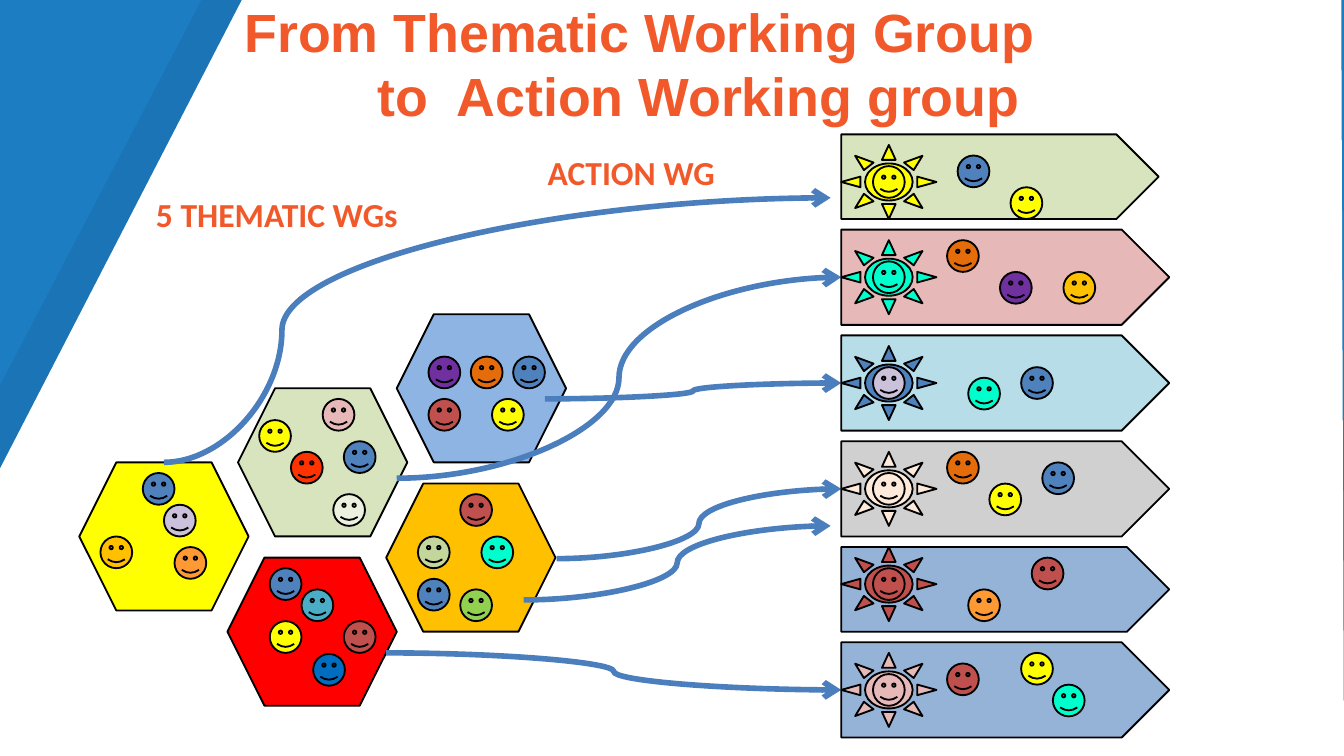
from dataclasses import dataclass

from lxml import etree
from pptx import Presentation
from pptx import util as u
from pptx.dml.color import RGBColor
from pptx.enum import shapes, text
from pptx.oxml.ns import qn

CELL = u.Mm(2)
GRID_LEFT, GRID_TOP = u.Inches(0.59), u.Inches(1)
SLIDE_WIDTH = u.Inches(10)
SLIDE_HEIGHT = SLIDE_WIDTH * 9 // 16
BANNER_COLUMN = 72

BLACK, WHITE, BACKDROP = "000000", "FFFFFF", "1C7DC3"
HEADING, ARROW = "F1592A", "4B7EBC"
BLUE, YELLOW, ORANGE, AMBER = "4F81BD", "FFFF00", "E46C0A", "FFC000"
PURPLE, BRICK, MINT, ROSE = "7030A0", "C0504D", "00FFCC", "E6B9B8"
APRICOT, LILAC, CREAM, SAGE = "FF9933", "CCC1DA", "FDEADA", "D7E4BD"
STEEL = "95B3D7"


@dataclass
class Face:
    """A member, placed in cells from its group's top left corner."""
    column: float
    row: float
    colour: str


@dataclass
class ThematicGroup:
    column: float
    row: float
    colour: str
    faces: list[Face]


@dataclass
class ActionGroup:
    row: float
    columns: float
    rows: float
    colour: str
    sun_colour: str
    leader_colour: str
    faces: list[Face]
    sun_offset: float = 1


@dataclass
class Flow:
    start: tuple[float, float]
    end: tuple[float, float]
    bend: float = 0.5


THEMATIC_GROUPS = [
    ThematicGroup(0, 31, YELLOW, [
        Face(2, 7, AMBER), Face(6, 1, BLUE), Face(8, 4, LILAC), Face(9, 8, APRICOT)]),
    ThematicGroup(15, 24, SAGE, [
        Face(8, 1, ROSE), Face(10, 5, BLUE), Face(9, 10, "EBF1DE"),
        Face(5, 6, "FF3300"), Face(2, 3, YELLOW)]),
    ThematicGroup(14, 40, "FF0000", [
        Face(4, 6, YELLOW), Face(7, 3, "4BACC6"), Face(8.1, 9.1, "006DC0"),
        Face(4, 1, BLUE), Face(11, 6, BRICK)]),
    ThematicGroup(29, 33, AMBER, [
        Face(9, 5, MINT), Face(7, 1, BRICK), Face(7, 10, "92D050"),
        Face(3, 5, "C3D69B"), Face(3, 9, BLUE)]),
    ThematicGroup(30, 17, "8EB4E3", [
        Face(7, 4, ORANGE), Face(9, 8, YELLOW), Face(3, 4, PURPLE),
        Face(11, 4, BLUE), Face(3, 8, BRICK)]),
]

ACTION_GROUPS = [
    ActionGroup(0, 30, 8, SAGE, YELLOW, YELLOW, [Face(11, 2, BLUE), Face(16, 5, YELLOW)]),
    ActionGroup(9, 31, 9, ROSE, MINT, MINT, [
        Face(10, 1, ORANGE), Face(15, 4, PURPLE), Face(21, 4, AMBER)]),
    ActionGroup(19, 31, 9, "B7DEE8", BLUE, LILAC, [Face(17, 3, BLUE), Face(12, 4, MINT)]),
    ActionGroup(29, 31, 9, "D0D0D0", CREAM, CREAM, [
        Face(19, 2, BLUE), Face(14, 4, YELLOW), Face(10, 1, ORANGE)]),
    ActionGroup(39, 31, 8, STEEL, BRICK, BRICK, [
        Face(18, 1, BRICK), Face(12, 4, APRICOT)], sun_offset=0),
    ActionGroup(48, 31, 9, STEEL, ROSE, ROSE, [
        Face(10, 2, BRICK), Face(17, 1, YELLOW), Face(20, 4, MINT)]),
]

FLOWS = [
    Flow((44, 25), (72, 23.5)),
    Flow((30, 32.5), (72, 13.5)),
    Flow((29, 49), (72, 52.5)),
    Flow((45.1, 40.1), (72, 33.5)),
    Flow((8, 31), (71, 6), bend=0.177),
    Flow((42, 44), (71, 37)),
]


def rgb(colour: str) -> RGBColor:
    return RGBColor.from_string(colour)


def at(column: float, row: float) -> tuple[int, int]:
    return GRID_LEFT + round(column * CELL), GRID_TOP + round(row * CELL)


def size(columns: float, rows: float) -> tuple[int, int]:
    return round(columns * CELL), round(rows * CELL)


def draw_shape(page, kind, column: float, row: float, columns: float, rows: float,
               colour: str) -> None:
    shape = page.shapes.add_shape(kind, *at(column, row), *size(columns, rows))
    shape.shadow.inherit = False
    shape.fill.solid()
    shape.fill.fore_color.rgb = rgb(colour)
    shape.line.color.rgb = rgb(BLACK)
    shape.line.width = u.Pt(1)


def draw_face(page, column: float, row: float, colour: str) -> None:
    draw_shape(page, shapes.MSO_SHAPE.SMILEY_FACE, column, row, 3, 3, colour)


def draw_faces(page, faces: list[Face], column: float, row: float) -> None:
    for face in faces:
        draw_face(page, column + face.column, row + face.row, face.colour)


def draw_leader(page, group: ActionGroup) -> None:
    row = group.row + group.sun_offset
    draw_shape(page, shapes.MSO_SHAPE.SUN, BANNER_COLUMN, row, 9, 7, group.sun_colour)
    draw_face(page, BANNER_COLUMN + 3, row + 2, group.leader_colour)


def draw_flow(page, flow: Flow) -> None:
    arrow = page.shapes.add_connector(
        shapes.MSO_CONNECTOR.CURVE, *at(*flow.start), *at(*flow.end))
    arrow.line.color.rgb = rgb(ARROW)
    arrow.line.width = u.Pt(3)
    properties = arrow._element.spPr
    etree.SubElement(properties.find(qn("a:ln")), qn("a:tailEnd"), type="arrow")
    etree.SubElement(properties, qn("a:effectLst"))
    guides = properties.find(qn("a:prstGeom")).get_or_add_avLst()
    etree.SubElement(guides, qn("a:gd"), name="adj1", fmla=f"val {round(flow.bend * 100000)}")


def draw_panel(page, top_left: float, left_edge: float, colour: str, opacity: float = 1) -> None:
    """Cover the page right of a diagonal; its ends are shares of width and height."""
    corners = [(0.998, 0), (1, 1), (0, 1), (0, left_edge), (top_left, 0)]
    points = [(round(x * SLIDE_WIDTH), round(y * SLIDE_HEIGHT)) for x, y in corners]
    builder = page.shapes.build_freeform(*points[0])
    builder.add_line_segments(points[1:])
    panel = builder.convert_to_shape()
    panel.shadow.inherit = False
    panel.fill.solid()
    panel.fill.fore_color.rgb = rgb(colour)
    panel.line.fill.background()
    if opacity < 1:
        tint = panel._element.spPr.find(qn("a:solidFill"))[0]
        etree.SubElement(tint, qn("a:alpha"), val=str(round(opacity * 100000)))


def draw_heading(page, words: str, place: tuple, extent: tuple, font: str, points: float):
    box = page.shapes.add_textbox(*place, *extent)
    box.text_frame.word_wrap = True
    para = box.text_frame.paragraphs[0]
    para.text = words
    para.font.name = font
    para.font.size = u.Pt(points)
    para.font.bold = True
    para.font.color.rgb = rgb(HEADING)
    return box


def main() -> None:
    deck = Presentation()
    deck.slide_width, deck.slide_height = SLIDE_WIDTH, SLIDE_HEIGHT
    page = deck.slides.add_slide(deck.slide_layouts[6])
    page.background.fill.solid()
    page.background.fill.fore_color.rgb = rgb(BACKDROP)
    draw_panel(page, 0.15, 0.51, BLACK, opacity=0.07)
    draw_panel(page, 0.18, 0.62, WHITE)

    title = draw_heading(page, "From Thematic Working Group\vto  Action Working group ",
                         (u.Inches(0.91), 0), (u.Inches(7.01), u.Inches(0.94)), "Arial", 28.8)
    title.text_frame.vertical_anchor = text.MSO_ANCHOR.MIDDLE
    title.text_frame.margin_right = u.Inches(0.22)
    title.text_frame.paragraphs[0].alignment = text.PP_ALIGN.RIGHT
    draw_heading(page, "5 THEMATIC WGs", at(6, 5), size(33, 5), "Calibri", 18)
    draw_heading(page, "ACTION WG", at(43, 1), size(29, 5), "Calibri", 18)

    for group in THEMATIC_GROUPS:
        draw_shape(page, shapes.MSO_SHAPE.HEXAGON, group.column, group.row, 16, 14, group.colour)
    for group in ACTION_GROUPS:
        draw_shape(page, shapes.MSO_SHAPE.PENTAGON, BANNER_COLUMN, group.row,
                   group.columns, group.rows, group.colour)
    for flow in FLOWS:
        draw_flow(page, flow)
    for group in THEMATIC_GROUPS:
        draw_faces(page, group.faces, group.column, group.row)
    for group in ACTION_GROUPS:
        draw_leader(page, group)
        draw_faces(page, group.faces, BANNER_COLUMN, group.row)
    deck.save("out.pptx")


if __name__ == "__main__":
    main()
